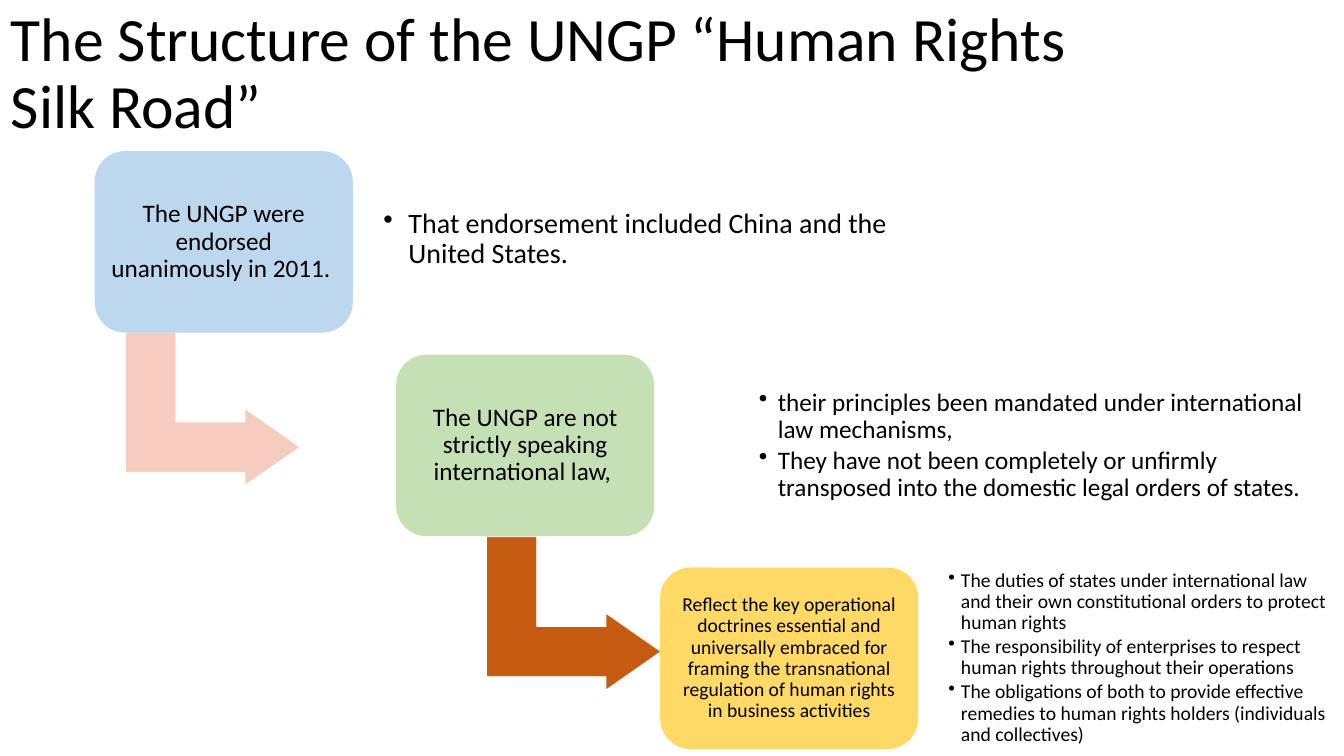
from dataclasses import dataclass

from lxml.etree import SubElement
from pptx import Presentation
from pptx.dml.color import RGBColor as Rgb
from pptx.enum.shapes import MSO_SHAPE as Form
from pptx.enum.text import MSO_ANCHOR as Anchor, PP_ALIGN as Align
from pptx.oxml.ns import qn
from pptx.util import Pt


@dataclass(frozen=True)
class Theme:
    """Hold the colours and type sizes of the slide."""
    font: str = "Calibri"
    ink: str = "000000"
    edge: str = "FFFFFF"
    blue: str = "BDD7EE"
    green: str = "C5E0B4"
    gold: str = "FFD966"
    pink: str = "F6CCBE"
    rust: str = "C55A11"
    title: int = 44
    large: int = 20
    mid: int = 18
    small: int = 14


LOOK = Theme()
CARD = (184.32, 129.6)
ARROW = (109.44, 124.56)

STEPS = [
    dict(at=(67.7, 108), fill=LOOK.blue, size=LOOK.mid, inset=5,
         text="The UNGP were endorsed unanimously in 2011. ",
         arrow=(29.5, 121.7, LOOK.pink),
         note=dict(box=(200.1, 10.8, 391.7, 104.4), size=LOOK.large, inset=6, hang=18,
                   lines=["That endorsement included China and the United States."])),
    dict(at=(283, 253.4), fill=LOOK.green, size=LOOK.mid, inset=5,
         text="The UNGP are not strictly speaking international law, ",
         arrow=(72, 122.4, LOOK.rust),
         note=dict(box=(254.1, 13, 422.6, 104.4), size=LOOK.mid, inset=5, hang=13.5,
                   lines=["their principles been mandated under international law mechanisms,",
                          "They have not been completely or unfirmly transposed into the "
                          "domestic legal orders of states."])),
    dict(at=(471.6, 405.4), fill=LOOK.gold, size=LOOK.small, inset=4.2,
         text="Reflect the key operational doctrines essential and universally embraced "
              "for framing the transnational regulation of human rights in business activities",
         arrow=None,
         note=dict(box=(201.6, -4.3, 287.3, 137.5), size=LOOK.small, inset=4.2, hang=9,
                   lines=["The duties of states under international law and their own "
                          "constitutional orders to protect human rights",
                          "The responsibility of enterprises to respect human rights "
                          "throughout their operations",
                          "The obligations of both to provide effective remedies to human "
                          "rights holders (individuals and collectives)"])),
]


def apply(item, **vals):
    """Set each given attribute on the item."""
    for key, val in vals.items():
        setattr(item, key, val)


def write(shape, lines, size, inset, align=Align.LEFT, hang=None):
    """Fill a shape with lines of text, bulleted when a hang is given."""
    frame = shape.text_frame
    sides = ("margin_left", "margin_top", "margin_right", "margin_bottom")
    apply(frame, word_wrap=True, vertical_anchor=Anchor.MIDDLE,
          **dict(zip(sides, map(Pt, inset))))
    for num, line in enumerate(lines):
        para = frame.add_paragraph() if num else frame.paragraphs[0]
        para.text = line
        apply(para, alignment=align, line_spacing=0.9)
        if hang:
            para.space_after = Pt(round(size * 0.15, 1))
            props = para._p.get_or_add_pPr()
            props.set("marL", str(Pt(hang)))
            props.set("indent", str(-Pt(hang)))
            SubElement(props, qn("a:buChar")).set("char", "•")
        apply(para.font, name=LOOK.font, size=Pt(size))
        para.font.color.rgb = Rgb.from_string(LOOK.ink)


def block(slide, form, box, fill, adjust):
    """Add a filled preset shape without a shadow."""
    shape = slide.shapes.add_shape(form, *map(Pt, box))
    shape.shadow.inherit = False
    shape.fill.solid()
    shape.fill.fore_color.rgb = Rgb.from_string(fill)
    for num, val in enumerate(adjust):
        shape.adjustments[num] = val
    return shape


def head(slide, box, text):
    """Place the title in its box."""
    area = slide.shapes.add_textbox(*map(Pt, box))
    write(area, [text], LOOK.title, (7.2, 3.6) * 2)


def bend(slide, left, top, fill):
    """Place a bent arrow that turns right below a card."""
    shape = block(slide, Form.BENT_UP_ARROW, (left, top, *ARROW), fill,
                  (0.328, 0.25, 0.358))
    shape.rotation = 90
    shape.line.color.rgb = Rgb.from_string(LOOK.edge)
    shape.line.width = Pt(0.5)


def step(slide, at, fill, size, inset, text, arrow, note):
    """Place a card with its arrow and its note, relative to the card corner."""
    left, top = at
    if arrow:
        right, down, tint = arrow
        bend(slide, left + right, top + down, tint)
    card = block(slide, Form.ROUNDED_RECTANGLE, (*at, *CARD), fill, (0.167,))
    card.line.fill.background()
    write(card, [text], size, (inset,) * 4, Align.CENTER)
    right, down, wide, high = note["box"]
    area = slide.shapes.add_textbox(*map(Pt, (left + right, top + down, wide, high)))
    write(area, note["lines"], note["size"], (note["inset"],) * 4, hang=note["hang"])


def main():
    """Build and save the slide."""
    deck = Presentation()
    apply(deck, slide_width=Pt(960), slide_height=Pt(540))
    slide = deck.slides.add_slide(deck.slide_layouts[6])
    head(slide, (0.7, 1.4, 828, 104.4), "The Structure of the UNGP “Human Rights Silk Road”")
    for item in STEPS:
        step(slide, **item)
    deck.save("out.pptx")


if __name__ == "__main__":
    main()
